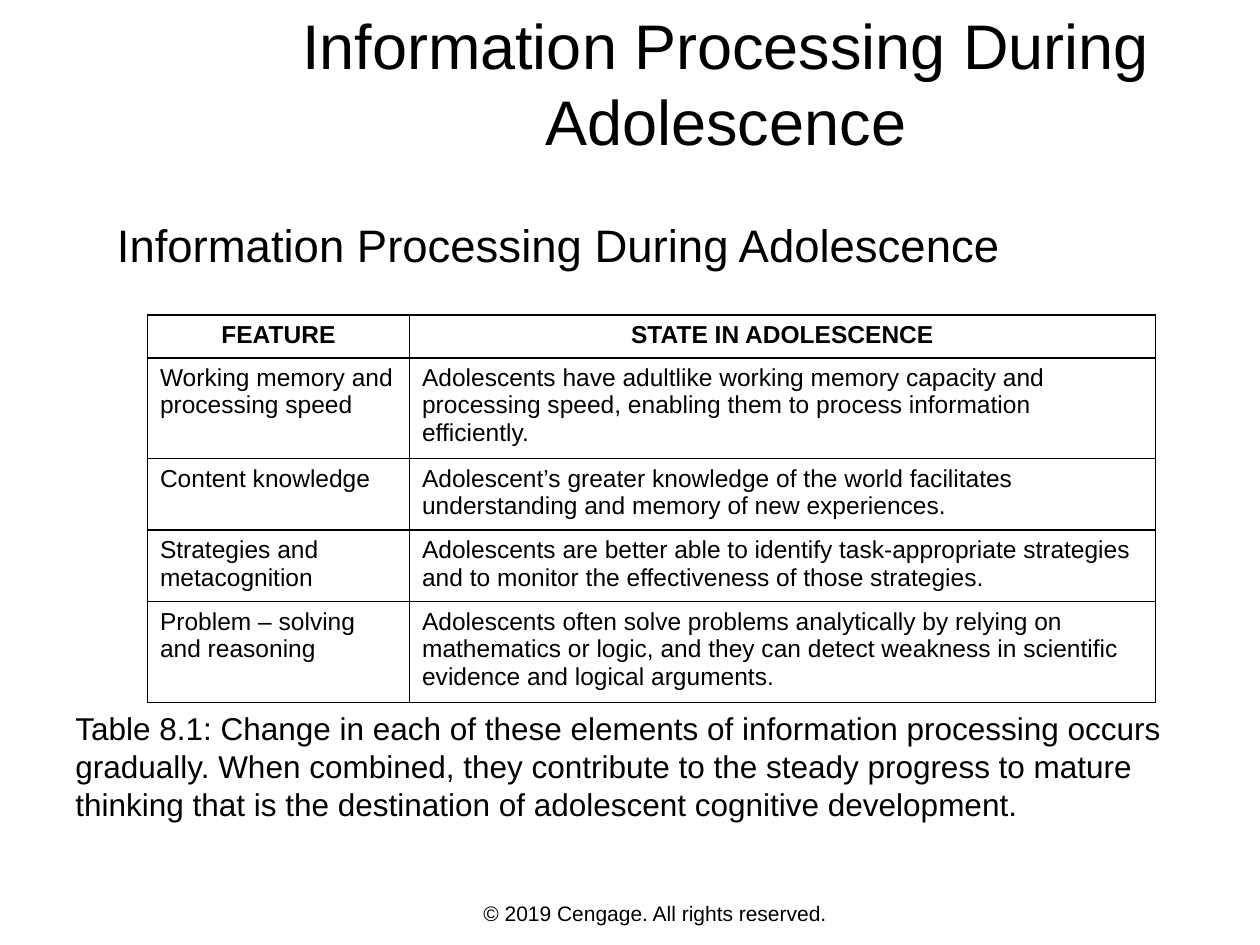
from dataclasses import dataclass

from lxml.etree import SubElement
from pptx import Presentation
from pptx.dml.color import RGBColor
from pptx.enum.text import MSO_ANCHOR, PP_ALIGN
from pptx.oxml.ns import qn
from pptx.util import Inches, Pt


@dataclass(frozen=True)
class Theme:
    font: str = "Arial"
    ink: str = "000000"
    paper: str = "FFFFFF"
    title: int = 36
    heading: int = 26
    caption: int = 18
    table: int = 14
    footer: int = 12
    border: int = 1


THEME = Theme()
TOPIC = "Information Processing During Adolescence"
CAPTION = (
    "Table 8.1: Change in each of these elements of information processing occurs "
    "gradually. When combined, they contribute to the steady progress to mature "
    "thinking that is the destination of adolescent cognitive development."
)
COLUMN_WIDTHS = (2.08, 5.92)
# Each row: height, feature, state in adolescence
FEATURE_ROWS = (
    (0.34, "FEATURE", "STATE IN ADOLESCENCE"),
    (0.76, "Working memory and processing speed",
     "Adolescents have adultlike working memory capacity and processing speed, "
     "enabling them to process information efficiently."),
    (0.54, "Content knowledge",
     "Adolescent’s greater knowledge of the world facilitates understanding and "
     "memory of new experiences."),
    (0.54, "Strategies and metacognition",
     "Adolescents are better able to identify task-appropriate strategies and to "
     "monitor the effectiveness of those strategies."),
    (0.75, "Problem – solving and reasoning",
     "Adolescents often solve problems analytically by relying on mathematics or "
     "logic, and they can detect weakness in scientific evidence and logical "
     "arguments."),
)


def write(frame, text, size, align=PP_ALIGN.LEFT, bold=False):
    frame.word_wrap = True
    para = frame.paragraphs[0]
    para.alignment = align
    span = para.add_run()
    span.text = text
    span.font.name = THEME.font
    span.font.size = Pt(size)
    span.font.bold = bold
    span.font.color.rgb = RGBColor.from_string(THEME.ink)


def add_text(page, area, text, size, align=PP_ALIGN.LEFT, anchor=MSO_ANCHOR.TOP):
    box = page.shapes.add_textbox(*map(Inches, area))
    box.text_frame.vertical_anchor = anchor
    write(box.text_frame, text, size, align)


def outline(cell):
    """Draw a thin line on all four sides of a table cell."""
    properties = cell._tc.get_or_add_tcPr()
    for side in ("a:lnL", "a:lnR", "a:lnT", "a:lnB"):
        line = SubElement(properties, qn(side), w=str(Pt(THEME.border)))
        fill = SubElement(line, qn("a:solidFill"))
        SubElement(fill, qn("a:srgbClr"), val=THEME.ink)


def add_feature_table(page, left, top):
    width = sum(COLUMN_WIDTHS)
    height = sum(row[0] for row in FEATURE_ROWS)
    table = page.shapes.add_table(
        len(FEATURE_ROWS), len(COLUMN_WIDTHS),
        *map(Inches, (left, top, width, height)),
    ).table
    for column, column_width in zip(table.columns, COLUMN_WIDTHS):
        column.width = Inches(column_width)
    for index, (row_height, *texts) in enumerate(FEATURE_ROWS):
        header = index == 0
        align = PP_ALIGN.CENTER if header else PP_ALIGN.LEFT
        table.rows[index].height = Inches(row_height)
        for cell, text in zip(table.rows[index].cells, texts):
            outline(cell)
            cell.fill.background()
            write(cell.text_frame, text, THEME.table, align, bold=header)


def build_page(deck):
    page = deck.slides.add_slide(deck.slide_layouts[6])
    page.background.fill.solid()
    page.background.fill.fore_color.rgb = RGBColor.from_string(THEME.paper)
    add_text(page, (1.65, 7.1, 7.1, 0.3), "© 2019 Cengage. All rights reserved.",
             THEME.footer, PP_ALIGN.CENTER)
    add_text(page, (1.97, 0.08, 7.58, 1.15), TOPIC, THEME.title,
             PP_ALIGN.CENTER, MSO_ANCHOR.MIDDLE)
    add_text(page, (0.83, 1.67, 8.33, 0.58), TOPIC, THEME.heading)
    add_feature_table(page, 1.17, 2.5)
    add_text(page, (0.5, 5.58, 9.08, 1.08), CAPTION, THEME.caption)


def main():
    deck = Presentation()
    deck.slide_width, deck.slide_height = Inches(10), Inches(7.5)
    build_page(deck)
    deck.save("out.pptx")


if __name__ == "__main__":
    main()
